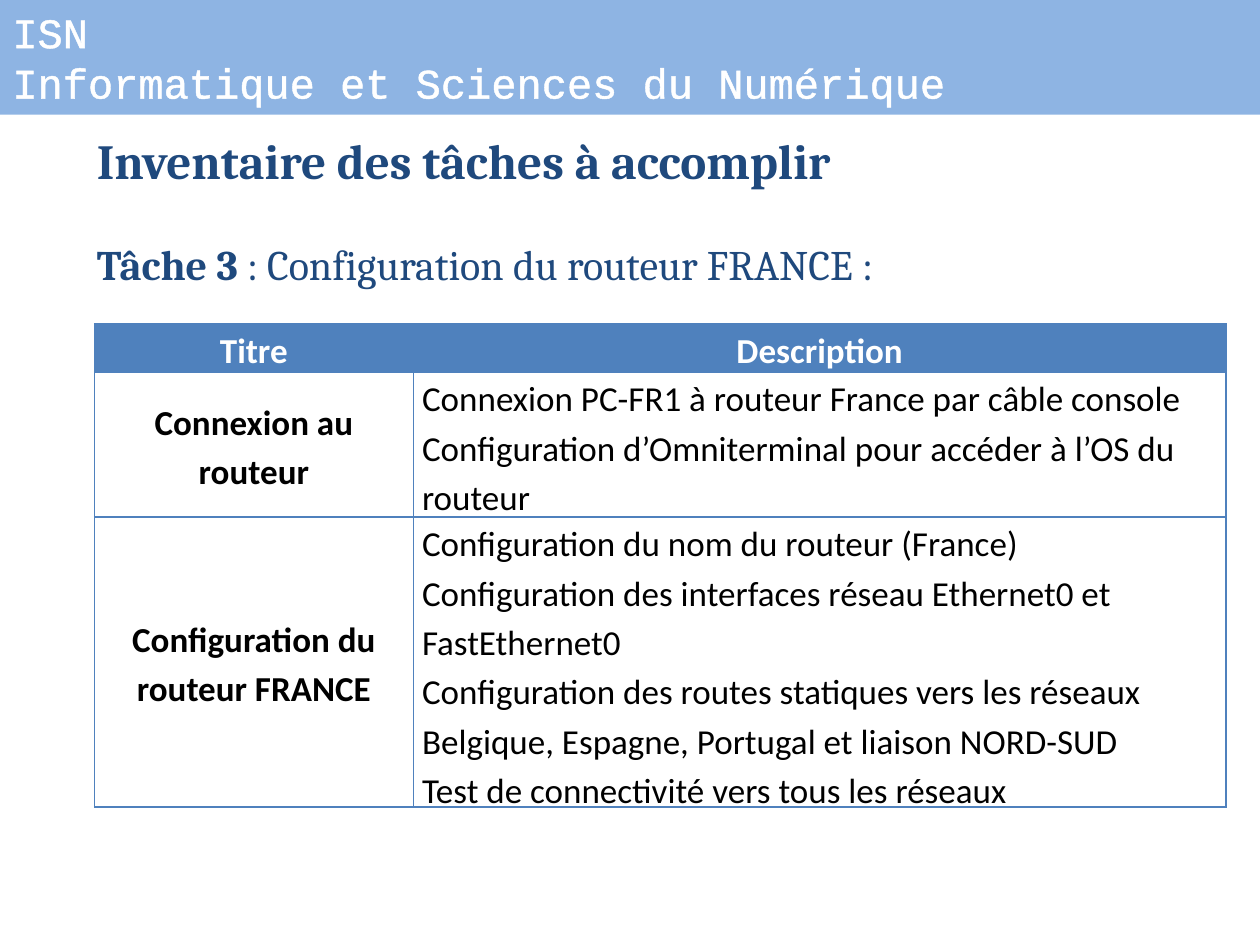
from dataclasses import dataclass

from lxml.etree import SubElement
from pptx import Presentation
from pptx.dml.color import RGBColor
from pptx.enum.shapes import MSO_SHAPE
from pptx.enum.text import MSO_ANCHOR, PP_ALIGN
from pptx.oxml import parse_xml
from pptx.oxml.ns import nsdecls, qn
from pptx.util import Inches, Pt


@dataclass(frozen=True)
class Theme:
    band: str = "8EB4E3"
    accent: str = "4F81BD"
    heading: str = "1F497D"
    white: str = "FFFFFF"
    black: str = "000000"
    band_font: str = "Courier New"
    heading_font: str = "Cambria"
    table_font: str = "Calibri"
    title_size: int = 28
    text_size: int = 24
    table_size: int = 20


THEME = Theme()
WIDTH, HEIGHT = 10, 7.5
HEADER = ("Titre", "Description")
TASKS = [
    ("Connexion au routeur", [
        "Connexion PC-FR1 à routeur France par câble console",
        "Configuration d’Omniterminal pour accéder à l’OS du routeur",
    ]),
    ("Configuration du routeur FRANCE", [
        "Configuration du nom du routeur (France)",
        "Configuration des interfaces réseau Ethernet0 et FastEthernet0",
        "Configuration des routes statiques vers les réseaux Belgique, "
        "Espagne, Portugal et liaison NORD-SUD",
        "Test de connectivité vers tous les réseaux",
    ]),
]


def add_run(p, text, font, size, color, bold=False):
    r = p.add_run()
    r.text = text
    r.font.name, r.font.size, r.font.bold = font, Pt(size), bold
    r.font.color.rgb = RGBColor.from_string(color)
    return r


def next_paragraph(tf, index):
    return tf.paragraphs[0] if index == 0 else tf.add_paragraph()


def outline_text(r, color, width):
    ln = parse_xml(
        f'<a:ln {nsdecls("a")} w="{Pt(width)}"><a:solidFill>'
        f'<a:srgbClr val="{color}"/></a:solidFill></a:ln>')
    r.font._element.insert(0, ln)


def add_band(slide, box):
    """Coloured course banner."""
    sp = slide.shapes.add_shape(MSO_SHAPE.RECTANGLE, *map(Inches, box))
    sp.shadow.inherit = False
    sp.fill.solid()
    sp.fill.fore_color.rgb = RGBColor.from_string(THEME.band)
    sp.line.fill.background()
    tf = sp.text_frame
    tf.word_wrap = True
    tf.vertical_anchor = MSO_ANCHOR.TOP
    for i, text in enumerate(("ISN", "Informatique et Sciences du Numérique")):
        p = next_paragraph(tf, i)
        p.alignment = PP_ALIGN.LEFT
        r = add_run(p, text, THEME.band_font, THEME.text_size, THEME.white)
        outline_text(r, THEME.white, 1.45)


def add_headings(slide, box):
    """Slide title and task line."""
    tf = slide.shapes.add_textbox(*map(Inches, box)).text_frame
    tf.word_wrap = True
    font, color = THEME.heading_font, THEME.heading
    add_run(tf.paragraphs[0], "Inventaire des tâches à accomplir",
            font, THEME.title_size, color, True)
    p = tf.add_paragraph()
    p.space_before = Pt(28)
    add_run(p, "Tâche 3 ", font, THEME.text_size, color, True)
    add_run(p, ": Configuration du routeur FRANCE :",
            font, THEME.text_size, color)


def set_borders(cell, color, width):
    tc_pr = cell._tc.get_or_add_tcPr()
    for i, side in enumerate(("lnL", "lnR", "lnT", "lnB")):
        ln = parse_xml(f'<a:{side} {nsdecls("a")} w="{Pt(width)}"/>')
        SubElement(SubElement(ln, qn("a:solidFill")), qn("a:srgbClr"), val=color)
        tc_pr.insert(i, ln)


def fill_cell(cell, lines, color, bold, centered, background=None):
    cell.margin_left = cell.margin_right = Inches(0.07)
    cell.margin_top = cell.margin_bottom = 0
    cell.vertical_anchor = MSO_ANCHOR.MIDDLE
    if background:
        cell.fill.solid()
        cell.fill.fore_color.rgb = RGBColor.from_string(background)
    else:
        cell.fill.background()
    set_borders(cell, THEME.accent, 1)
    for i, text in enumerate(lines):
        p = next_paragraph(cell.text_frame, i)
        p.alignment = PP_ALIGN.CENTER if centered else PP_ALIGN.LEFT
        p.line_spacing = 1.15
        add_run(p, text, THEME.table_font, THEME.table_size, color, bold)


def add_task_table(slide, box, columns, rows):
    """Task titles with their steps."""
    table = slide.shapes.add_table(
        len(rows), len(columns), *map(Inches, box)).table
    table.first_row = table.horz_banding = False
    for column, width in zip(table.columns, columns):
        column.width = Inches(width)
    for row, height in zip(table.rows, rows):
        row.height = Inches(height)
    for c, text in enumerate(HEADER):
        fill_cell(table.cell(0, c), [text], THEME.white, True, True, THEME.accent)
    for i, (title, steps) in enumerate(TASKS, start=1):
        fill_cell(table.cell(i, 0), [title], THEME.black, True, True)
        fill_cell(table.cell(i, 1), steps, THEME.black, False, False)


def main():
    prs = Presentation()
    prs.slide_width, prs.slide_height = Inches(WIDTH), Inches(HEIGHT)
    slide = prs.slides.add_slide(prs.slide_layouts[6])
    add_headings(slide, (0.67, 0.99, 9.13, 1.38))
    add_task_table(slide, (0.75, 2.57, 8.98, 3.83),
                   columns=(2.53, 6.45), rows=(0.38, 1.15, 2.3))
    add_band(slide, (0, 0, WIDTH, 0.91))
    prs.save("out.pptx")


if __name__ == "__main__":
    main()
